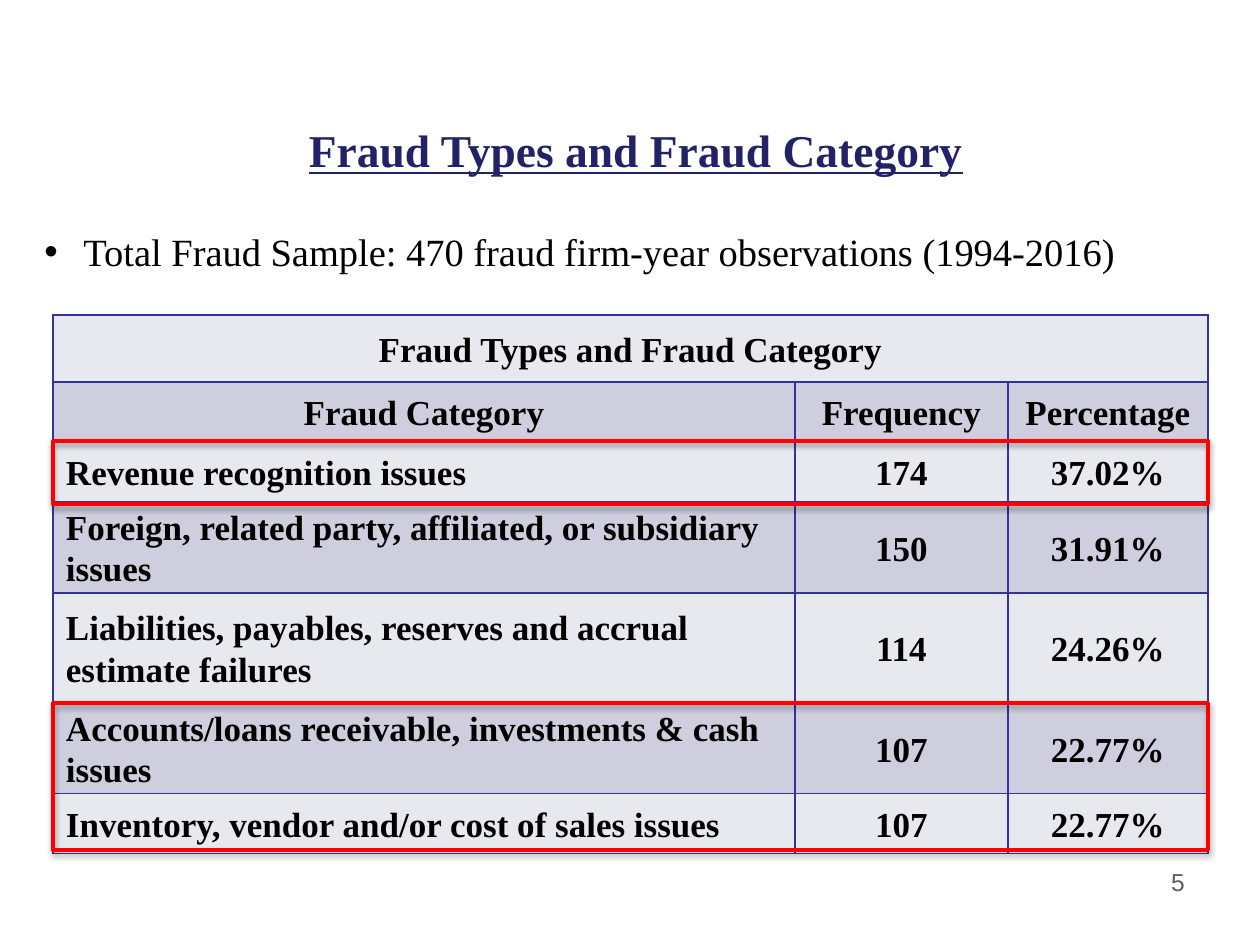
from lxml.etree import SubElement
from pptx import Presentation
from pptx.dml.color import RGBColor
from pptx.enum.shapes import MSO_SHAPE
from pptx.enum.text import MSO_ANCHOR, PP_ALIGN
from pptx.oxml.ns import qn
from pptx.util import Emu, Pt

SERIF = "Times New Roman"
HEADING = "Fraud Types and Fraud Category"
ROWS = [
    (HEADING, "", ""),
    ("Fraud Category", "Frequency", "Percentage"),
    ("Revenue recognition issues", "174", "37.02%"),
    ("Foreign, related party, affiliated, or subsidiary issues", "150", "31.91%"),
    ("Liabilities, payables, reserves and accrual estimate failures", "114", "24.26%"),
    ("Accounts/loans receivable, investments & cash issues", "107", "22.77%"),
    ("Inventory, vendor and/or cost of sales issues", "107", "22.77%"),
]
COL_WIDTHS = [742, 213, 200]
ROW_HEIGHTS = [67, 60, 60, 60, 110, 60, 60]
BAND_FILLS = ["E8E8EF", "CECEDE"]


def px(n):
    return Emu(round(n * 914400 / 126))


def color(hex_code):
    return RGBColor.from_string(hex_code)


def add_run(p, text, size, hex_code, font=SERIF, bold=False, underline=False):
    r = p.add_run()
    r.text = text
    f = r.font
    f.name, f.size, f.bold, f.underline = font, Pt(size), bold, underline
    f.color.rgb = color(hex_code)


def add_text(s, box, align):
    tf = s.shapes.add_textbox(*map(px, box)).text_frame
    tf.word_wrap = True
    p = tf.paragraphs[0]
    p.alignment = align
    return p


def add_bullet(p, indent):
    pPr = p._p.get_or_add_pPr()
    pPr.set("marL", str(px(indent)))
    pPr.set("indent", str(-px(indent)))
    SubElement(pPr, qn("a:buFont"), typeface="Arial")
    SubElement(pPr, qn("a:buChar"), char="•")


def set_borders(cell, hex_code, width):
    tcPr = cell._tc.get_or_add_tcPr()
    for i, side in enumerate(("lnL", "lnR", "lnT", "lnB")):
        ln = SubElement(tcPr, qn(f"a:{side}"), w=str(Pt(width)))
        fill = SubElement(ln, qn("a:solidFill"))
        SubElement(fill, qn("a:srgbClr"), val=hex_code)
        tcPr.insert(i, ln)  # borders come before the cell fill


def fill_cell(cell, text, fill, is_label):
    cell.fill.solid()
    cell.fill.fore_color.rgb = color(fill)
    set_borders(cell, "333399", 1)
    cell.vertical_anchor = MSO_ANCHOR.MIDDLE
    cell.margin_left = cell.margin_right = cell.margin_top = px(1)
    cell.margin_bottom = 0
    p = cell.text_frame.paragraphs[0]
    p.line_spacing, p.space_after = 1.07, Pt(8)
    if is_label:
        p.alignment = PP_ALIGN.LEFT
        p._p.get_or_add_pPr().set("marL", str(px(12)))
    else:
        p.alignment = PP_ALIGN.CENTER
    if text:
        add_run(p, text, 20, "000000", bold=True)


def add_fraud_table(s, left, top):
    size = sum(COL_WIDTHS), sum(ROW_HEIGHTS)
    table = s.shapes.add_table(len(ROWS), len(COL_WIDTHS),
                               *map(px, (left, top, *size))).table
    for column, width in zip(table.columns, COL_WIDTHS):
        column.width = px(width)
    for i, (values, height) in enumerate(zip(ROWS, ROW_HEIGHTS)):
        table.rows[i].height = px(height)
        for j, text in enumerate(values):
            fill_cell(table.cell(i, j), text, BAND_FILLS[i % 2], i > 1 and j == 0)
    table.cell(0, 0).merge(table.cell(0, len(COL_WIDTHS) - 1))


def add_highlight(s, box):
    sp = s.shapes.add_shape(MSO_SHAPE.RECTANGLE, *map(px, box))
    sp.fill.background()
    sp.line.color.rgb = color("FF0000")
    sp.line.width = Pt(2.25)
    sp.shadow.inherit = False
    # Soft shadow straight below the frame
    effects = sp._element.spPr.find(qn("a:effectLst"))
    shadow = SubElement(effects, qn("a:outerShdw"), blurRad=str(Pt(3.1)),
                        dist=str(Pt(1.8)), dir="5400000", rotWithShape="0")
    tint = SubElement(shadow, qn("a:srgbClr"), val="000000")
    SubElement(tint, qn("a:alpha"), val="35000")


def main():
    prs = Presentation()
    prs.slide_width, prs.slide_height = px(1260), px(945)
    s = prs.slides.add_slide(prs.slide_layouts[6])

    # Slide number
    p = add_text(s, (903, 861, 294, 66), PP_ALIGN.RIGHT)
    add_run(p, "5", 14, "5F5F5F", font="Arial")

    add_fraud_table(s, 53, 315)

    # Title and sample size
    p = add_text(s, (116, 116, 1040, 68), PP_ALIGN.CENTER)
    add_run(p, HEADING, 26, "222267", bold=True, underline=True)
    p = add_text(s, (32, 222, 1113, 59), PP_ALIGN.LEFT)
    add_bullet(p, 39)
    add_run(p, "Total Fraud Sample: 470 fraud firm-year observations (1994-2016)",
            22, "000000")

    # Frames around the key categories
    for top, height in ((441, 63), (703, 147)):
        add_highlight(s, (53, top, sum(COL_WIDTHS), height))

    prs.save("out.pptx")


if __name__ == "__main__":
    main()
